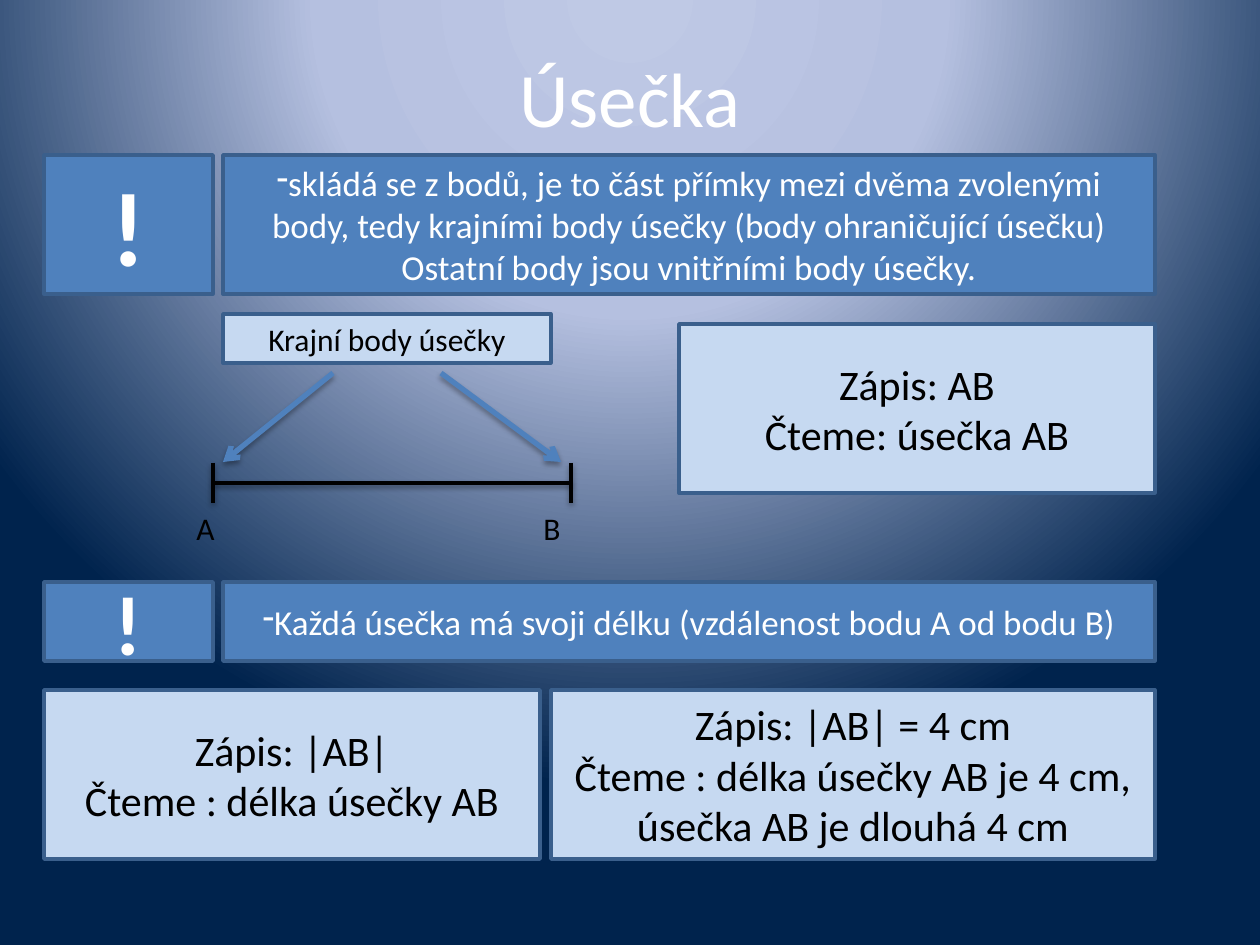
from lxml.etree import SubElement
from pptx import Presentation
from pptx.dml.color import RGBColor
from pptx.enum.shapes import MSO_CONNECTOR, MSO_SHAPE
from pptx.enum.text import MSO_ANCHOR, MSO_AUTO_SIZE, PP_ALIGN
from pptx.oxml import parse_xml
from pptx.oxml.ns import nsdecls, qn
from pptx.util import Emu, Pt

SCALE = 914400 / 126  # EMU in one px
WHITE, BLACK = "FFFFFF", "000000"
BLUE, PALE, BORDER = "4F81BD", "C6D9F1", "3A5F8C"


def px(*lengths):
    return [Emu(round(length * SCALE)) for length in lengths]


def color(value):
    return RGBColor.from_string(value)


class SlideBuilder:
    font = "Calibri"

    def __init__(self, slide):
        self.slide = slide
        self.shapes = slide.shapes

    def background(self, stops):
        """Fill the background with a circular gradient centred above the slide."""
        stop_xml = "".join(
            f'<a:gs pos="{position * 1000}"><a:srgbClr val="{value}"/></a:gs>'
            for position, value in stops
        )
        background = parse_xml(
            f'<p:bg {nsdecls("p", "a")}><p:bgPr><a:gradFill rotWithShape="1">'
            f'<a:gsLst>{stop_xml}</a:gsLst><a:path path="circle">'
            '<a:fillToRect l="50000" t="-80000" r="50000" b="180000"/></a:path>'
            "</a:gradFill><a:effectLst/></p:bgPr></p:bg>"
        )
        self.slide.element.cSld.insert(0, background)

    def set_text(self, shape, lines, size, text_color, align=PP_ALIGN.CENTER,
                 anchor=MSO_ANCHOR.MIDDLE, bold=False, bullet=None):
        frame = shape.text_frame
        frame.word_wrap = True
        frame.vertical_anchor = anchor
        frame.text = "\n".join(lines)
        font_format = {"name": self.font, "size": Pt(size), "bold": bold}
        for paragraph in frame.paragraphs:
            paragraph.alignment = align
            font = paragraph.runs[0].font
            for name, value in font_format.items():
                setattr(font, name, value)
            font.color.rgb = color(text_color)
            if bullet:
                properties = paragraph._p.get_or_add_pPr()
                properties.set("marL", "0")
                properties.set("indent", "0")
                SubElement(properties, qn("a:buFontTx"))
                SubElement(properties, qn("a:buChar"), char=bullet)

    def title(self, text, box):
        shape = self.shapes.title
        shape.left, shape.top, shape.width, shape.height = px(*box)
        self.set_text(shape, [text], 44, WHITE)

    def box(self, lines, box, size, fill=PALE, text_color=BLACK, **text_format):
        shape = self.shapes.add_shape(MSO_SHAPE.RECTANGLE, *px(*box))
        shape.shadow.inherit = False
        shape.fill.solid()
        shape.fill.fore_color.rgb = color(fill)
        shape.line.color.rgb = color(BORDER)
        shape.line.width = Pt(2)
        self.set_text(shape, lines, size, text_color, **text_format)

    def rule(self, text, top, height, mark_size):
        """Add an exclamation mark box and the rule that stands beside it."""
        self.box(["!"], (44, top, 169, height), mark_size, BLUE, WHITE, bold=True)
        self.box([text], (223, top, 932, height), 20, BLUE, WHITE, bullet="-")

    def label(self, text, box):
        shape = self.shapes.add_textbox(*px(*box))
        self.set_text(shape, [text], 18, BLACK, PP_ALIGN.LEFT, MSO_ANCHOR.TOP)
        shape.text_frame.auto_size = MSO_AUTO_SIZE.SHAPE_TO_FIT_TEXT

    def line(self, start, end, line_color=BLACK, width=2, opacity=38,
             distance=1.6, arrow=False):
        """Add a straight line with a soft shadow below it."""
        connector = self.shapes.add_connector(
            MSO_CONNECTOR.STRAIGHT, *px(*start, *end))
        connector.line.color.rgb = color(line_color)
        connector.line.width = Pt(width)
        properties = connector._element.spPr
        if arrow:
            SubElement(properties.find(qn("a:ln")), qn("a:tailEnd"), type="arrow")
        properties.append(parse_xml(
            f'<a:effectLst {nsdecls("a")}><a:outerShdw blurRad="{Pt(3.1)}" '
            f'dist="{Pt(distance)}" dir="5400000" rotWithShape="0">'
            f'<a:srgbClr val="{BLACK}"><a:alpha val="{opacity * 1000}"/></a:srgbClr>'
            "</a:outerShdw></a:effectLst>"
        ))


def draw_segment(builder):
    """Draw segment AB with its end points named and pointed at."""
    point_a, point_b, middle = 213, 571, 483
    builder.line((point_a, middle), (point_b, middle))
    for x in (point_a, point_b):
        builder.line((x, middle - 20), (x, middle + 20))
    for name, left in (("A", 184), ("B", 531)):
        builder.label(name, (left, 503, 59, 50))
    builder.box(["Krajní body úsečky"], (223, 314, 328, 49), 18)
    for start_x, end_x in ((441, 561), (333, 223)):
        builder.line((start_x, 373), (end_x, 462), BLUE, 3,
                     opacity=35, distance=1.8, arrow=True)


def main():
    presentation = Presentation()
    presentation.slide_width, presentation.slide_height = px(1260, 945)
    builder = SlideBuilder(
        presentation.slides.add_slide(presentation.slide_layouts[5]))
    builder.background([(0, "BFC9E5"), (40, "B5C0E0"), (100, "00234D")])
    builder.title("Úsečka", (63, 38, 1134, 117))
    builder.rule(
        "skládá se z bodů, je to část přímky mezi dvěma zvolenými body, "
        "tedy krajními body úsečky (body ohraničující úsečku) "
        "Ostatní body jsou vnitřními body úsečky.", 155, 139, 60)
    draw_segment(builder)
    builder.box(["Zápis: AB", "Čteme: úsečka AB"], (679, 324, 476, 169), 24)
    builder.rule("Každá úsečka má svoji délku (vzdálenost bodu A od bodu B)",
                 582, 79, 48)
    builder.box(["Zápis: |AB|", "Čteme : délka úsečky AB"],
                (44, 690, 496, 169), 24)
    builder.box(["Zápis: |AB| = 4 cm",
                 "Čteme : délka úsečky AB je 4 cm, úsečka AB je dlouhá 4 cm"],
                (551, 690, 604, 169), 24)
    presentation.save("out.pptx")


if __name__ == "__main__":
    main()
